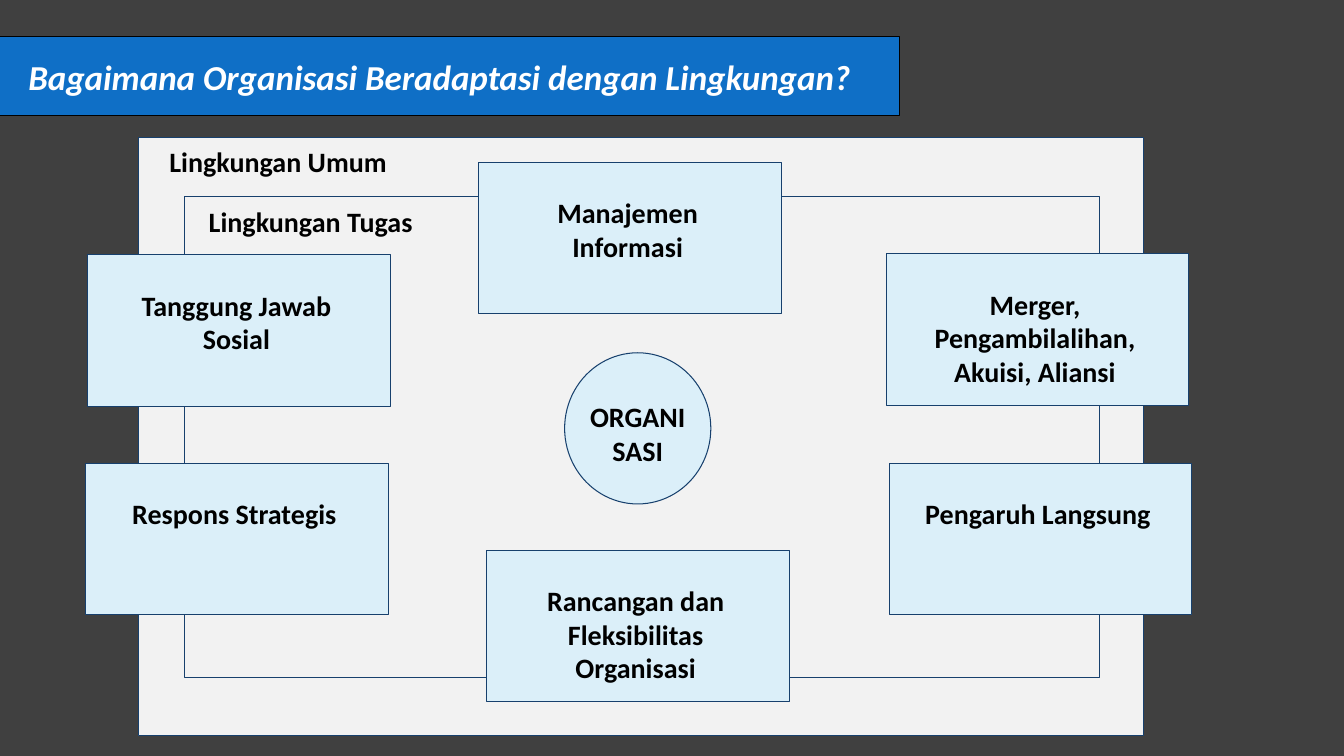
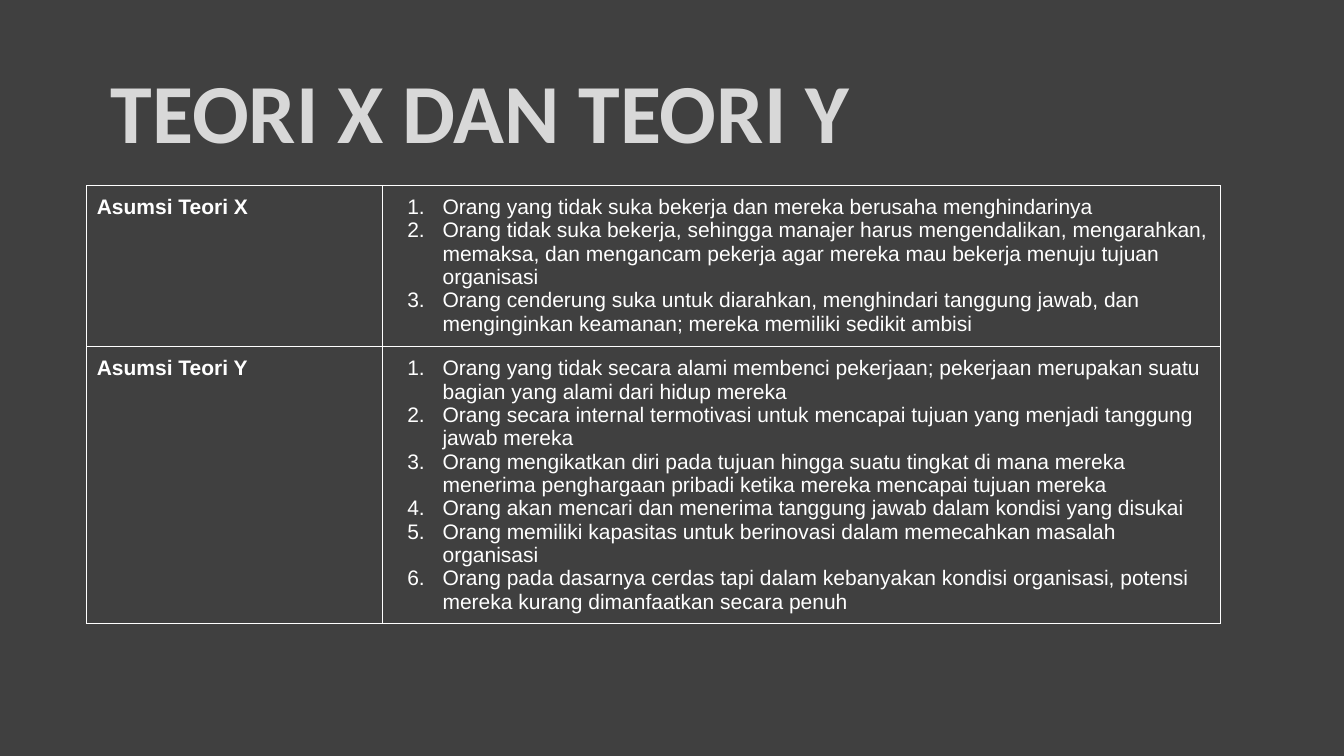
"""Build two slides on how organisations adapt and on theories X and Y."""
from pptx import Presentation
from pptx.dml.color import RGBColor
from pptx.enum.shapes import MSO_SHAPE as Shape
from pptx.enum.text import MSO_ANCHOR as Anchor, MSO_AUTO_SIZE as Fit, PP_ALIGN as Align
from pptx.oxml.ns import qn
from pptx.util import Inches, Pt
from lxml.etree import SubElement

DARK = RGBColor(0x40, 0x40, 0x40)
PALE = RGBColor(0xF2, 0xF2, 0xF2)
SKY = RGBColor(0xDB, 0xEF, 0xF9)
BLUE = RGBColor(0x0F, 0x6F, 0xC6)
NAVY = RGBColor(0x17, 0x40, 0x6D)
BLACK = RGBColor(0x00, 0x00, 0x00)
WHITE = RGBColor(0xFF, 0xFF, 0xFF)
GREY = RGBColor(0xD8, 0xD8, 0xD8)

CARDS = [
    (4.75, 1.61, "Manajemen Informasi"),
    (8.79, 2.52, "Merger, Pengambilalihan, Akuisi, Aliansi"),
    (0.87, 2.53, "Tanggung Jawab Sosial"),
    (0.85, 4.6, "Respons Strategis"),
    (8.82, 4.6, "Pengaruh Langsung"),
    (4.83, 5.46, "Rancangan dan Fleksibilitas Organisasi"),
]
ROWS = [
    (1.6, "Asumsi Teori X", [
        "Orang yang tidak suka bekerja dan mereka berusaha menghindarinya",
        "Orang tidak suka bekerja, sehingga manajer harus mengendalikan, mengarahkan, "
        "memaksa, dan mengancam pekerja agar mereka mau bekerja menuju tujuan organisasi",
        "Orang cenderung suka untuk diarahkan, menghindari tanggung jawab, dan "
        "menginginkan keamanan; mereka memiliki sedikit ambisi",
    ]),
    (2.74, "Asumsi Teori Y", [
        "Orang yang tidak secara alami membenci pekerjaan; pekerjaan merupakan suatu "
        "bagian yang alami dari hidup mereka",
        "Orang secara internal termotivasi untuk mencapai tujuan yang menjadi tanggung "
        "jawab mereka",
        "Orang mengikatkan diri pada tujuan hingga suatu tingkat di mana mereka "
        "menerima penghargaan pribadi ketika mereka mencapai tujuan mereka",
        "Orang akan mencari dan menerima tanggung jawab dalam kondisi yang disukai",
        "Orang memiliki kapasitas untuk berinovasi dalam memecahkan masalah organisasi",
        "Orang pada dasarnya cerdas tapi dalam kebanyakan kondisi organisasi, potensi "
        "mereka kurang dimanfaatkan secara penuh",
    ]),
]


def count(para):
    """Number a paragraph with a hanging indent."""
    props = para._p.get_or_add_pPr()
    props.set("marL", str(Inches(0.5)))
    props.set("indent", str(Inches(-0.35)))
    tint = SubElement(props, qn("a:buClr"))
    SubElement(tint, qn("a:srgbClr"), val=str(WHITE))
    SubElement(props, qn("a:buFont"), typeface="Arial")
    SubElement(props, qn("a:buAutoNum"), type="arabicPeriod")


def write(frame, *texts, size=20, font="Calibri", color=BLACK, bold=True,
          slant=False, align=Align.LEFT, listed=False):
    """Fill a text frame with one paragraph for each text."""
    for i, text in enumerate(texts):
        para = frame.add_paragraph() if i else frame.paragraphs[0]
        if listed:
            count(para)
        para.alignment = align
        run = para.add_run()
        run.text = text
        face = run.font
        face.name, face.size, face.bold, face.italic = font, Pt(size), bold, slant
        face.color.rgb = color


def inset(box, left, top, right, base):
    """Set the four margins of a text frame or cell in inches."""
    box.margin_left, box.margin_top = Inches(left), Inches(top)
    box.margin_right, box.margin_bottom = Inches(right), Inches(base)


def paint(shape, fill, line):
    """Give a shape its fill and a thin line."""
    shape.fill.solid()
    shape.fill.fore_color.rgb = fill
    shape.line.color.rgb = line
    shape.line.width = Pt(0.75)


def block(slide, kind, area, text, pad, fill=SKY, anchor=Anchor.TOP, align=Align.CENTER):
    """Draw a filled shape with its label inside."""
    shape = slide.shapes.add_shape(kind, *map(Inches, area))
    shape.shadow.inherit = False
    paint(shape, fill, NAVY)
    frame = shape.text_frame
    frame.word_wrap = True
    frame.vertical_anchor = anchor
    inset(frame, *pad)
    write(frame, text, align=align)


def head(slide, text, area, left, **style):
    """Place and format the title and return it."""
    title = slide.shapes.title
    title.left, title.top, title.width, title.height = map(Inches, area)
    frame = title.text_frame
    frame.auto_size = Fit.NONE
    frame.word_wrap = True
    frame.vertical_anchor = Anchor.MIDDLE
    inset(frame, left, 0, 0.13, 0)
    write(frame, text, **style)
    return title


def edge(cell):
    """Draw thin white borders around a cell."""
    props = cell._tc.get_or_add_tcPr()
    for i, side in enumerate(("lnL", "lnR", "lnT", "lnB")):
        line = props.makeelement(qn(f"a:{side}"), {"w": str(Pt(0.75))})
        fill = SubElement(line, qn("a:solidFill"))
        SubElement(fill, qn("a:srgbClr"), val=str(WHITE))
        props.insert(i, line)


def fill_cell(cell, *texts, **style):
    """Format a cell and write its text."""
    cell.fill.background()
    edge(cell)
    inset(cell, 0.1, 0.1, 0.1, 0.1)
    write(cell.text_frame, *texts, size=15, font="Arial", color=WHITE, **style)


def adapt(slide):
    """Build the slide on adapting to the environment."""
    band = head(slide, "Bagaimana Organisasi Beradaptasi dengan Lingkungan?",
                (-0.16, 0.36, 9.08, 0.79), 0.44, size=25, color=WHITE, slant=True)
    paint(band, BLUE, BLACK)
    block(slide, Shape.RECTANGLE, (1.37, 1.36, 9.97, 5.94), "Lingkungan Umum",
          (0.31, 0.07, 0, 0), fill=PALE, align=Align.LEFT)
    block(slide, Shape.RECTANGLE, (1.83, 1.95, 9.08, 4.77), "Lingkungan Tugas",
          (0.24, 0.08, 0, 0), fill=PALE, align=Align.LEFT)
    block(slide, Shape.OVAL, (5.6, 3.5, 1.45, 1.5), "ORGANISASI",
          (0, 0.1, 0, 0), anchor=Anchor.MIDDLE)
    for left, top, text in CARDS:
        block(slide, Shape.RECTANGLE, (left, top, 3, 1.5), text, (0.35, 0.33, 0.4, 0))


def compare(slide):
    """Build the slide on theories X and Y."""
    head(slide, "TEORI X DAN TEORI Y", (0.97, 0.56, 10.61, 1.06), 0.13,
         size=60, color=GREY, align=Align.JUSTIFY)
    widths = (2.93, 8.32)
    high = sum(row[0] for row in ROWS)
    area = (0.86, 1.84, sum(widths), high)
    table = slide.shapes.add_table(len(ROWS), len(widths), *map(Inches, area)).table
    table.first_row = table.horz_banding = False
    for column, width in zip(table.columns, widths):
        column.width = Inches(width)
    for i, (height, name, points) in enumerate(ROWS):
        table.rows[i].height = Inches(height)
        fill_cell(table.cell(i, 0), name)
        fill_cell(table.cell(i, 1), *points, bold=False, listed=True)


def main():
    """Build and save the deck."""
    deck = Presentation()
    deck.slide_width, deck.slide_height = Inches(13.33), Inches(7.5)
    ground = deck.slide_master.background.fill
    ground.solid()
    ground.fore_color.rgb = DARK
    for build in (adapt, compare):
        build(deck.slides.add_slide(deck.slide_layouts[5]))
    deck.save("out.pptx")


if __name__ == "__main__":
    main()
